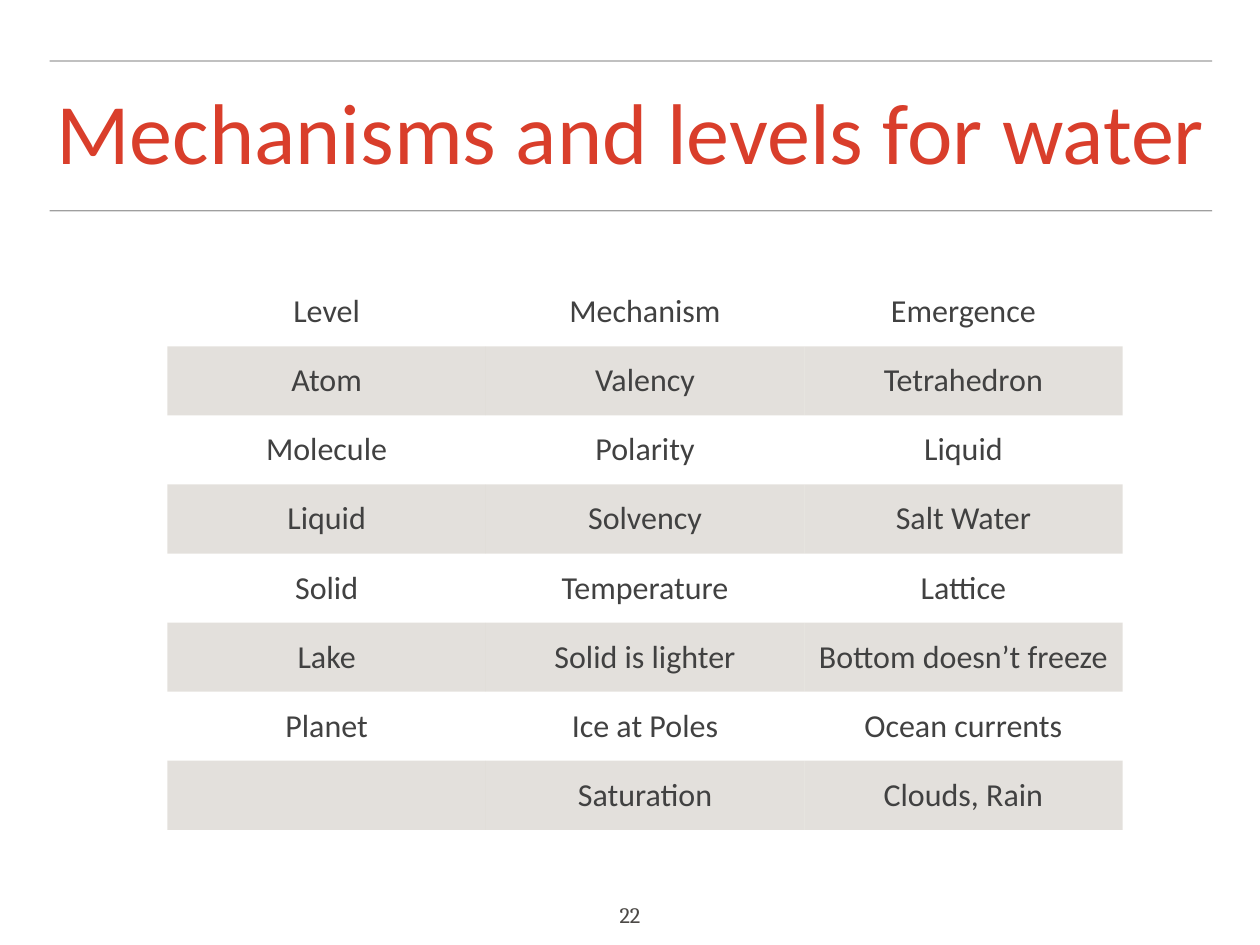
import dataclasses
import pptx
import pptx.dml.color
import pptx.enum.shapes
import pptx.enum.text
import pptx.oxml
import pptx.oxml.ns
import pptx.util
from pptx.util import Inches

ALIGN = pptx.enum.text.PP_ALIGN
ANCHOR = pptx.enum.text.MSO_ANCHOR
FIT = pptx.enum.text.MSO_AUTO_SIZE
PLAIN = "{2D5ABB26-0587-4C30-8999-92F81FD0307C}"
ROWS = [
    ("Level", "Mechanism", "Emergence"),
    ("Atom", "Valency", "Tetrahedron"),
    ("Molecule", "Polarity", "Liquid"),
    ("Liquid", "Solvency", "Salt Water"),
    ("Solid", "Temperature", "Lattice"),
    ("Lake", "Solid is lighter", "Bottom doesn’t freeze"),
    ("Planet", "Ice at Poles", "Ocean currents"),
    ("", "Saturation", "Clouds, Rain"),
]


@dataclasses.dataclass(frozen=True)
class Theme:
    """Colours, fonts and type sizes of the slide."""
    title: tuple = ("Calibri", 70, "D93E2B")
    cell: tuple = ("Calibri", 26, "414141")
    number: tuple = ("Cambria", 18, "4C4946")
    rule: str = "444444"
    band: str = "C9C3BA"


THEME = Theme()


def rgb(code):
    """Turn a hex code into a colour."""
    return pptx.dml.color.RGBColor.from_string(code)


def apply(item, values):
    """Set attributes from a dict of format values."""
    for name, value in values.items():
        setattr(item, name, value)


def tint(fill, node, code, alpha):
    """Fill with a colour at an opacity in percent."""
    fill.solid()
    fill.fore_color.rgb = rgb(code)
    mark = pptx.oxml.parse_xml(
        f'<a:alpha {pptx.oxml.ns.nsdecls("a")} val="{alpha * 1000}"/>')
    node.xpath(".//a:srgbClr")[0].append(mark)


def pad(item):
    """Give a cell or text frame its margins."""
    sides = ("left", "top", "right", "bottom")
    apply(item, {f"margin_{side}": Inches(0.06) for side in sides})


def write(frame, text, style, **extra):
    """Write one centred paragraph in a text style."""
    face, size, code = style
    frame.text = text
    para = frame.paragraphs[0]
    apply(para, {"alignment": ALIGN.CENTER, **extra})
    for font in [para.font] + [run.font for run in para.runs]:
        apply(font, {"name": face, "size": pptx.util.Pt(size), "bold": False})
        font.color.rgb = rgb(code)


def add_rule(slide, top):
    """Draw a thin line across the slide."""
    line = slide.shapes.add_connector(
        pptx.enum.shapes.MSO_CONNECTOR.STRAIGHT,
        Inches(0.56), Inches(top), Inches(13.68), Inches(top))
    line.line.width = pptx.util.Pt(1)
    node = line._element.spPr
    tint(line.line.fill, node, THEME.rule, 51)
    node.append(pptx.oxml.parse_xml(
        f'<a:effectLst {pptx.oxml.ns.nsdecls("a")}/>'))


def add_title(slide, text):
    """Place and format the title."""
    title = slide.shapes.title
    apply(title, {"left": Inches(0.56), "top": Inches(0.88),
                  "width": Inches(13.11), "height": Inches(1.33)})
    frame = title.text_frame
    pad(frame)
    apply(frame, {"vertical_anchor": ANCHOR.MIDDLE, "word_wrap": True,
                  "auto_size": FIT.NONE})
    write(frame, text, THEME.title, line_spacing=0.9)


def add_grid(slide, rows):
    """Add the table with every second row shaded."""
    table = slide.shapes.add_table(
        len(rows), len(rows[0]), Inches(1.89), Inches(3.13),
        Inches(10.78), Inches(0.78 * len(rows))).table
    apply(table, {"first_row": False, "horz_banding": False})
    table._tbl.tblPr.find(pptx.oxml.ns.qn("a:tableStyleId")).text = PLAIN
    for r, row in enumerate(rows):
        for c, text in enumerate(row):
            cell = table.cell(r, c)
            pad(cell)
            cell.vertical_anchor = ANCHOR.MIDDLE
            write(cell.text_frame, text, THEME.cell)
            if r % 2:
                tint(cell.fill, cell._tc.tcPr, THEME.band, 50)
            else:
                cell.fill.background()


def add_number(slide, text):
    """Add the slide number."""
    box = slide.shapes.add_textbox(
        Inches(6.92), Inches(10.12), Inches(0.38), Inches(0.44))
    frame = box.text_frame
    pad(frame)
    apply(frame, {"word_wrap": False, "auto_size": FIT.SHAPE_TO_FIT_TEXT})
    write(frame, text, THEME.number)


def main():
    """Build and save the slide."""
    deck = pptx.Presentation()
    apply(deck, {"slide_width": Inches(14.22), "slide_height": Inches(10.67)})
    slide = deck.slides.add_slide(deck.slide_layouts[5])
    for top in (2.38, 0.69):
        add_rule(slide, top)
    add_title(slide, "Mechanisms and levels for water")
    add_grid(slide, ROWS)
    add_number(slide, "22")
    deck.save("out.pptx")


if __name__ == "__main__":
    main()
